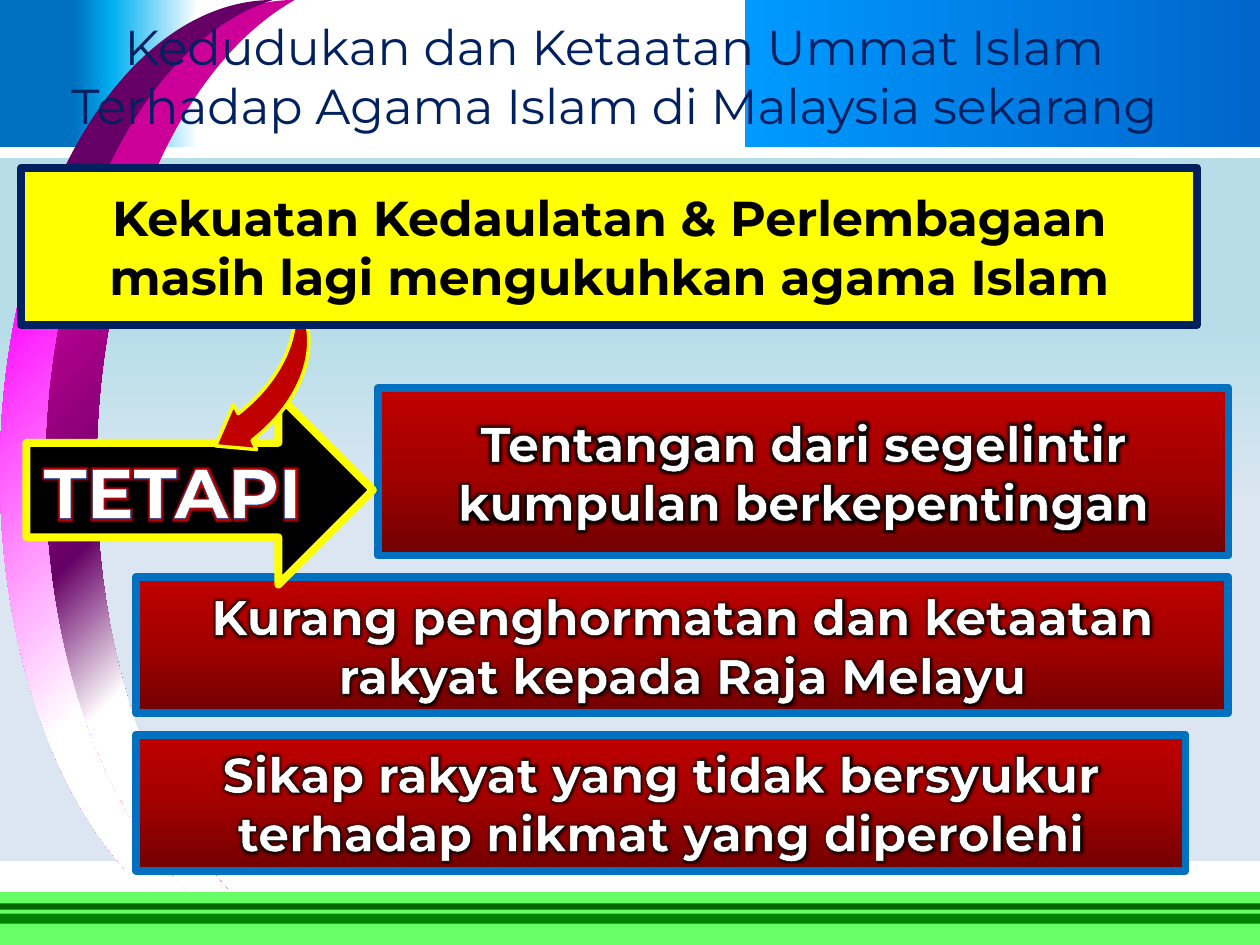
import pptx
import pptx.dml.color
import pptx.enum.shapes
import pptx.enum.text
import pptx.oxml
import pptx.oxml.ns
import pptx.util

Inches = pptx.util.Inches
Pt = pptx.util.Pt
qn = pptx.oxml.ns.qn
Kind = pptx.enum.shapes.MSO_SHAPE
FONT = "Montserrat"
XMLNS = 'xmlns:a="http://schemas.openxmlformats.org/drawingml/2006/main"'

# Content: gradients are (angle, stops); boxes are left, top, width, height
BACKDROP = [
    ((0, 1.25, 10, 5.58), (90, [(24, "B7DEE8"), (50, "DCE6F2")])),
    ((1.83, 0, 8.17, 1.17), (0, [(50, "FFFFFF"), (50, "0099FF"), (100, "0066CC")])),
    ((0, 0, 2.42, 1.17), (0, [(24, "0070C0"), (37, "00B0F0"), (65, "FFFFFF")])),
]
MOONS = [
    ((0.17, 0, 2.17, 7.5), 0.274, (45, [(24, "CC0099"), (50, "660066"), (65, "FFFFFF")])),
    ((0, 0, 2.17, 7.5), 0.164, (45, [(24, "660066"), (24, "FF00FF"), (65, "FFFFFF")])),
]
FOOTER = [(7.08, 0.42, "66FF66"), (7.17, 0.05, "006600"), (7.25, 0.08, "008000")]

TITLE = "Kedudukan dan Ketaatan Ummat Islam Terhadap Agama Islam di Malaysia sekarang"
STRENGTH = "Kekuatan Kedaulatan & Perlembagaan masih lagi mengukuhkan agama Islam"
BUT = "TETAPI"
RED = (270, [(0, "720000"), (50, "A20000"), (100, "C00000")])
PROBLEMS = [
    ((3, 3.08, 6.75, 1.33), "Tentangan dari segelintir kumpulan berkepentingan"),
    ((1.08, 5.83, 8.33, 1.08), "Sikap rakyat yang tidak bersyukur terhadap nikmat yang diperolehi"),
    ((1.08, 4.58, 8.67, 1.08), "Kurang penghormatan dan ketaatan rakyat kepada Raja Melayu"),
]


def color(value):
    return pptx.dml.color.RGBColor.from_string(value)


def element(xml):
    """Parse one drawing element, declaring its namespace."""
    name = xml[1:].split(" ")[0].split(">")[0].rstrip("/")
    return pptx.oxml.parse_xml(xml.replace(name, f"{name} {XMLNS}", 1))


def paint(shape, fill):
    """Fill with one colour, or with an (angle, stops) gradient."""
    if isinstance(fill, str):
        shape.fill.solid()
        shape.fill.fore_color.rgb = color(fill)
        return
    angle, stops = fill
    shape.fill.gradient()
    gradient = shape.element.spPr.find(qn("a:gradFill"))
    stop_list = gradient.find(qn("a:gsLst"))
    for stop in list(stop_list):
        stop_list.remove(stop)
    for position, value in stops:
        stop_list.append(element(
            f'<a:gs pos="{position * 1000}"><a:srgbClr val="{value}"/></a:gs>'))
    gradient.find(qn("a:lin")).set("ang", str(angle * 60000))


def add_shape(parent, kind, box, fill, line=None, adjustments=()):
    shape = parent.add_shape(kind, *map(Inches, box))
    shape.shadow.inherit = False
    for index, value in enumerate(adjustments):
        shape.adjustments[index] = value
    paint(shape, fill)
    if line:
        shape.line.color.rgb = color(line[0])
        shape.line.width = Pt(line[1])
        shape.line._get_or_add_ln().append(element("<a:round/>"))
    else:
        shape.line.fill.background()
    return shape


def write(shape, text, size, ink, bold=False, outline=None, glow=None):
    """Centred text; outline is (colour, points), glow is (colour, points)."""
    frame = shape.text_frame
    frame.word_wrap = True
    paragraph = frame.paragraphs[0]
    paragraph.alignment = pptx.enum.text.PP_ALIGN.CENTER
    span = paragraph.add_run()
    span.text = text
    span.font.size = Pt(size)
    span.font.name = FONT
    span.font.bold = bold
    span.font.color.rgb = color(ink)
    properties = span.font._element
    if glow:
        properties.find(qn("a:solidFill")).addnext(element(
            f'<a:effectLst><a:glow rad="{Pt(glow[1])}"><a:srgbClr val="{glow[0]}"/>'
            '</a:glow></a:effectLst>'))
    if outline:
        properties.insert(0, element(
            f'<a:ln w="{Pt(outline[1])}"><a:solidFill><a:srgbClr val="{outline[0]}"/>'
            '</a:solidFill></a:ln>'))


def add_text(page, box, *args, **style):
    label = page.shapes.add_textbox(*map(Inches, box))
    write(label, *args, **style)
    label.text_frame.auto_size = pptx.enum.text.MSO_AUTO_SIZE.SHAPE_TO_FIT_TEXT


def add_panel(page, box, fill, line, *args, **style):
    panel = add_shape(page.shapes, Kind.RECTANGLE, box, fill, line)
    panel.text_frame.vertical_anchor = pptx.enum.text.MSO_ANCHOR.MIDDLE
    write(panel, *args, **style)


def main():
    deck = pptx.Presentation()
    deck.slide_width, deck.slide_height = Inches(10), Inches(7.5)
    page = deck.slides.add_slide(deck.slide_layouts[6])

    # Backdrop, crescents and footer stripes
    for box, fill in BACKDROP:
        add_shape(page.shapes, Kind.RECTANGLE, box, fill)
    crescents = page.shapes.add_group_shape()
    for box, depth, fill in MOONS:
        add_shape(crescents.shapes, Kind.MOON, box, fill, adjustments=[depth])
    for top, height, fill in FOOTER:
        add_shape(page.shapes, Kind.RECTANGLE, (0, top, 10, height), fill)

    # Title and problem panels
    add_text(page, (0, 0.08, 9.75, 1.04), TITLE, 28, "002060", outline=("FFFFFF", 0.75))
    for box, text in PROBLEMS:
        add_panel(page, box, RED, ("0070C0", 4.5), text, 28, "FFFFFF", bold=True,
                  outline=("000000", 0.75), glow=("000000", 4))

    # Arrow with its label, then the curved arrow from the strength panel
    add_shape(page.shapes, Kind.RIGHT_ARROW, (0.21, 3.14, 2.75, 1.5), "000000",
              ("FFFF00", 4.5))
    add_text(page, (0.08, 3.51, 2.58, 0.77), BUT, 40, "FFFFFF", bold=True,
             outline=("054697", 1.5), glow=("C00000", 5))
    curve = add_shape(page.shapes, Kind.CURVED_LEFT_ARROW, (1.3, 1.65, 1.11, 1.92),
                      "C00000", ("FFFF00", 2), [0.216, 0.362, 0.25])
    curve.rotation = 332.7
    add_panel(page, (0.17, 1.33, 9.33, 1.25), "FFFF00", ("002060", 4.5),
              STRENGTH, 28, "000000", bold=True)

    deck.save("out.pptx")


if __name__ == "__main__":
    main()
